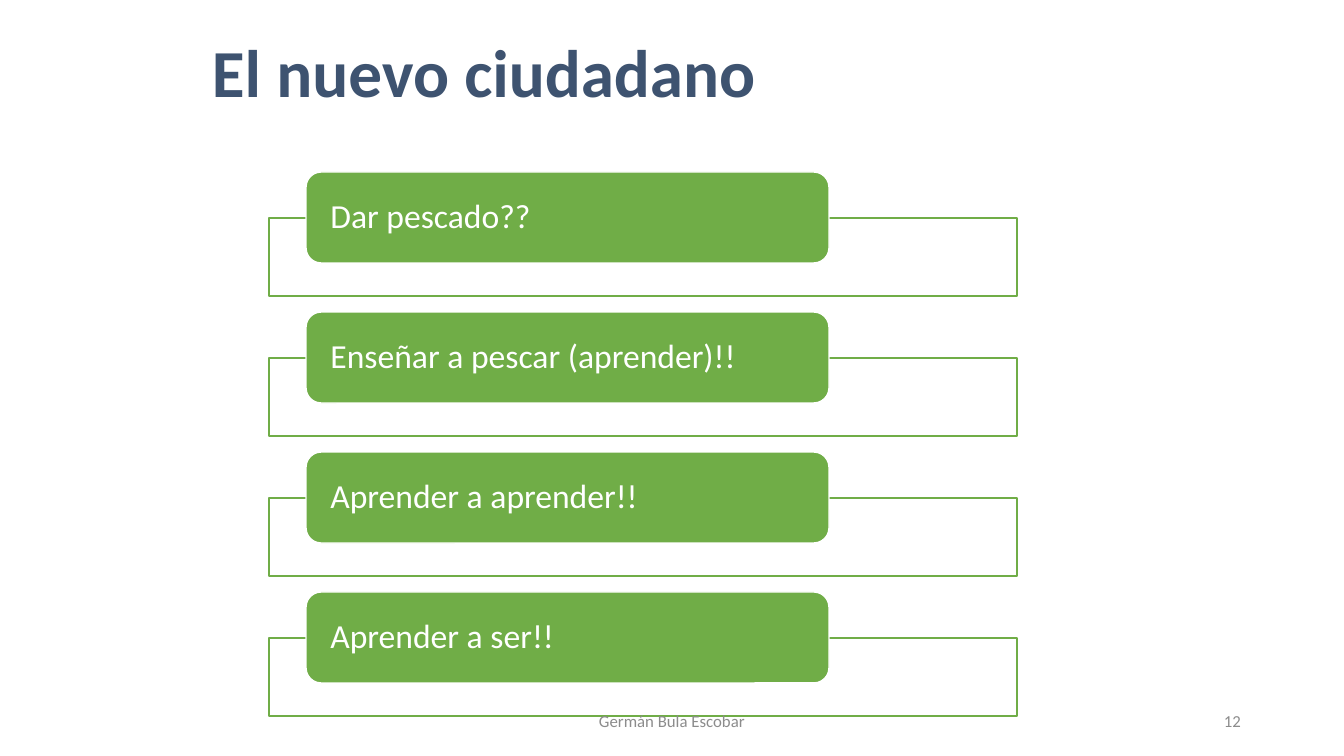
from lxml import etree
from pptx import Presentation
from pptx import util as u
from pptx.dml.color import RGBColor
from pptx.enum import shapes, text
from pptx.oxml.ns import qn

SCALE = 914400 / 100.8
GREEN, WHITE, NAVY, GRAY = "70AD47", "FFFFFF", "3E5370", "8C8C8C"
STEPS = [
    "Dar pescado??",
    "Enseñar a pescar (aprender)!!",
    "Aprender a aprender!!",
    "Aprender a ser!!",
]


def px(length):
    return u.Emu(round(length * SCALE))


def color(value):
    return RGBColor.from_string(value)


def write(shape, content, size, ink, bold=False, align=text.PP_ALIGN.LEFT,
          anchor=text.MSO_ANCHOR.MIDDLE, inset=(10, 5), spacing=1.0):
    frame = shape.text_frame
    frame.word_wrap = True
    frame.auto_size = text.MSO_AUTO_SIZE.NONE
    frame.vertical_anchor = anchor
    frame.margin_left = frame.margin_right = px(inset[0])
    frame.margin_top = frame.margin_bottom = px(inset[1])
    paragraph = frame.paragraphs[0]
    paragraph.alignment = align
    paragraph.line_spacing = spacing
    run = paragraph.add_run()
    run.text = content
    run.font.name = "Calibri"
    run.font.size = u.Pt(size)
    run.font.bold = bold
    run.font.color.rgb = color(ink)


def add_block(slide, kind, box, fill, line):
    shape = slide.shapes.add_shape(kind, *map(px, box))
    shape.shadow.inherit = False
    shape.fill.solid()
    shape.fill.fore_color.rgb = color(fill)
    shape.line.color.rgb = color(line)
    shape.line.width = u.Pt(1)
    return shape


def add_title(slide, box):
    title = slide.shapes.title
    title.left, title.top, title.width, title.height = map(px, box)
    write(title, "El nuevo ciudadano", 48, NAVY, bold=True,
          anchor=text.MSO_ANCHOR.TOP)


def add_step(slide, box, content):
    left, top, width, height = box
    frame = add_block(slide, shapes.MSO_SHAPE.RECTANGLE,
                      (left, top + 46, width, height - 46), WHITE, GREEN)
    fill_color = frame.fill._xPr.find(qn("a:solidFill"))[0]
    etree.SubElement(fill_color, qn("a:alpha"), val="90000")
    label = add_block(slide, shapes.MSO_SHAPE.ROUNDED_RECTANGLE,
                      (left + 37, top, 523, 91), GREEN, WHITE)
    write(label, content, 24, WHITE, inset=(20, 0), spacing=0.9)


def add_steps(slide, box, pitch):
    left, top, width, height = box
    for index, content in enumerate(STEPS):
        add_step(slide, (left, top + index * pitch, width, height), content)


def add_footer(slide, box):
    left, top, width, height = box
    author = slide.shapes.add_textbox(*map(px, (left, top, 454, height)))
    write(author, "Germán Bula Escobar", 12, GRAY, align=text.PP_ALIGN.CENTER)
    number = slide.shapes.add_textbox(
        *map(px, (left + width - 302, top, 302, height)))
    write(number, "12", 12, GRAY, align=text.PP_ALIGN.RIGHT)


def main():
    presentation = Presentation()
    presentation.slide_width, presentation.slide_height = px(1344), px(756)
    slide = presentation.slides.add_slide(presentation.slide_layouts[5])
    add_steps(slide, (269, 172, 748, 124), 140)
    add_title(slide, (202, 25, 832, 104))
    add_footer(slide, (445, 701, 806, 40))
    presentation.save("out.pptx")


if __name__ == "__main__":
    main()
